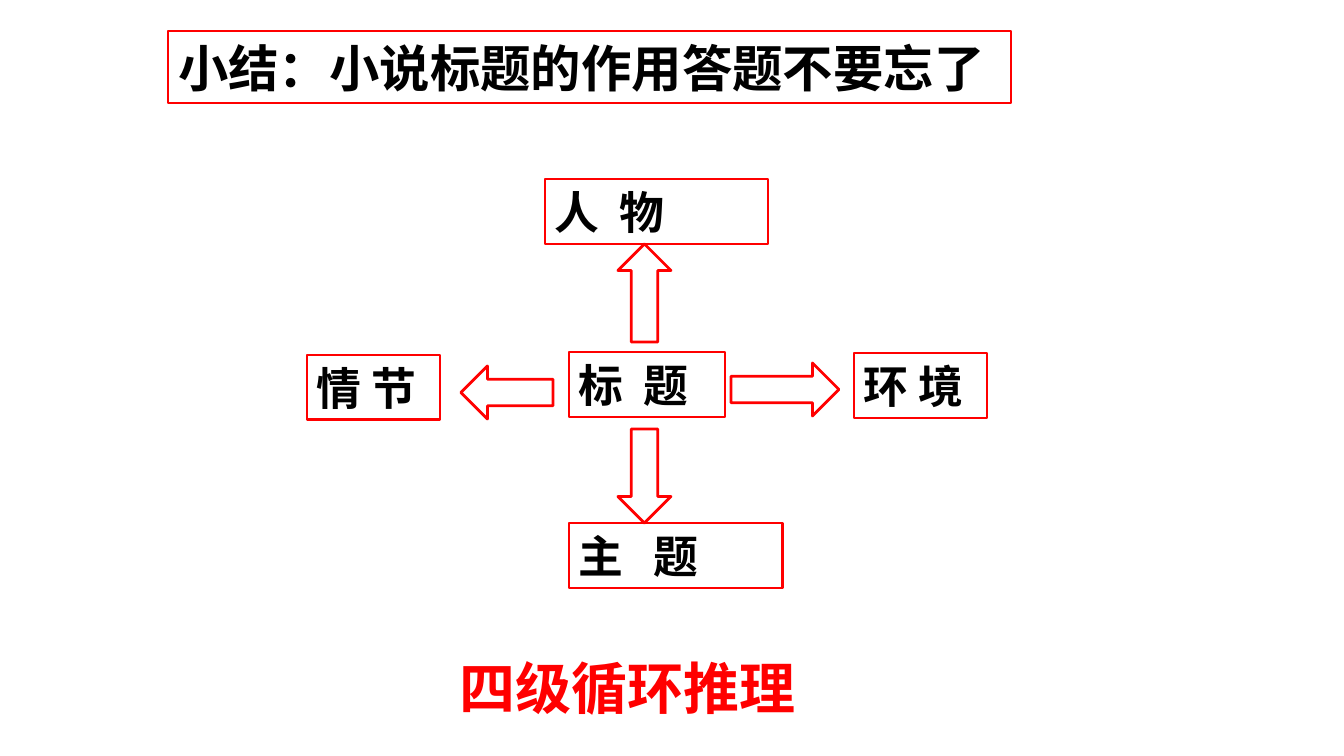
from lxml.etree import SubElement
from pptx import Presentation
from pptx.dml.color import RGBColor
from pptx.enum.shapes import MSO_SHAPE
from pptx.enum.text import MSO_ANCHOR, MSO_AUTO_SIZE, PP_ALIGN
from pptx.oxml.ns import qn
from pptx.util import Emu, Pt

RED, BLACK, WHITE = "FF0000", "000000", "FFFFFF"
CJK = "Noto Sans CJK SC"
EMU_PER_PX = 914400 / 100.8

# Boxes in px: left, top, width, height
TITLE = ("小结：小说标题的作用答题不要忘了", (168, 31, 843, 72))
CONCLUSION = ("四级循环推理", (450, 648, 412, 78))
# Text, letter spacing in hundredths of a point, box
TOPICS = [
    ("人 物", 360, (545, 179, 223, 65)),
    ("情 节", 0, (307, 355, 133, 65)),
    ("环 境", 0, (854, 353, 133, 65)),
    ("主 题", 720, (569, 523, 214, 65)),
    ("标 题", 360, (569, 352, 156, 65)),
]
ARROWS = [
    (MSO_SHAPE.UP_ARROW, (618, 244, 53, 98)),
    (MSO_SHAPE.LEFT_ARROW, (461, 366, 92, 53)),
    (MSO_SHAPE.RIGHT_ARROW, (731, 363, 108, 53)),
    (MSO_SHAPE.DOWN_ARROW, (618, 429, 53, 94)),
]


def px(n):
    return Emu(round(n * EMU_PER_PX))


def color(hex_code):
    return RGBColor.from_string(hex_code)


def outline(sp):
    sp.fill.solid()
    sp.fill.fore_color.rgb = color(WHITE)
    sp.line.color.rgb = color(RED)
    sp.line.width = Pt(2)


def write(sp, text, size=32, fill=BLACK, font=CJK, spacing=0):
    tf = sp.text_frame
    tf.word_wrap = True
    tf.auto_size = MSO_AUTO_SIZE.NONE
    tf.vertical_anchor = MSO_ANCHOR.MIDDLE
    p = tf.paragraphs[0]
    p.alignment = PP_ALIGN.LEFT
    r = p.add_run()
    r.text = text
    r.font.size = Pt(size)
    r.font.bold = True
    r.font.name = font
    r.font.color.rgb = color(fill)
    rPr = r.font._element
    SubElement(rPr, qn("a:ea")).set("typeface", CJK)
    if spacing:
        rPr.set("spc", str(spacing))


def add_outlined(slide, kind, box):
    sp = slide.shapes.add_shape(kind, *map(px, box))
    sp.shadow.inherit = False
    outline(sp)
    return sp


def main():
    prs = Presentation()
    prs.slide_width, prs.slide_height = px(1344), px(756)
    slide = prs.slides.add_slide(prs.slide_layouts[5])

    text, box = TITLE
    title = slide.shapes.title
    title.left, title.top, title.width, title.height = map(px, box)
    outline(title)
    write(title, text, size=36)

    for text, spacing, box in TOPICS:
        write(add_outlined(slide, MSO_SHAPE.RECTANGLE, box), text, spacing=spacing)
    for kind, box in ARROWS:
        add_outlined(slide, kind, box)

    text, box = CONCLUSION
    write(slide.shapes.add_textbox(*map(px, box)), text, size=40, fill=RED, font="Arial")

    prs.save("out.pptx")


if __name__ == "__main__":
    main()
